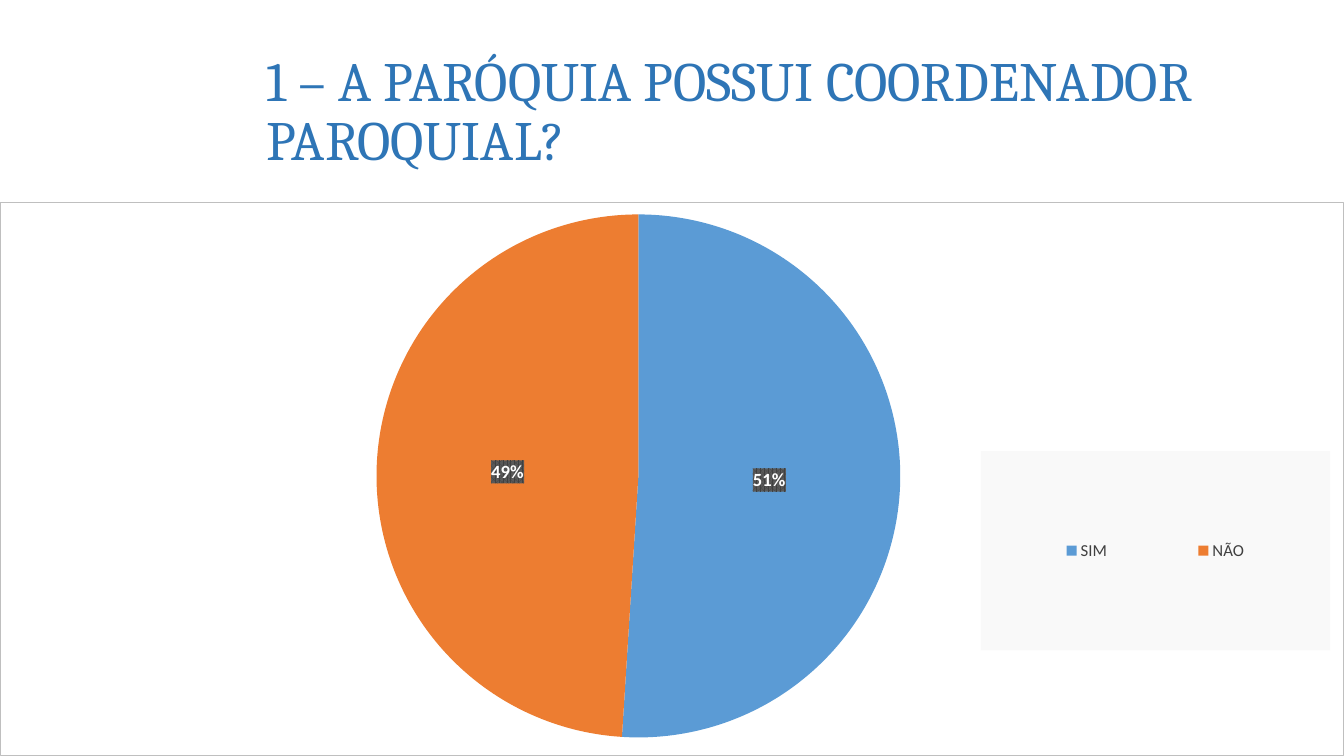
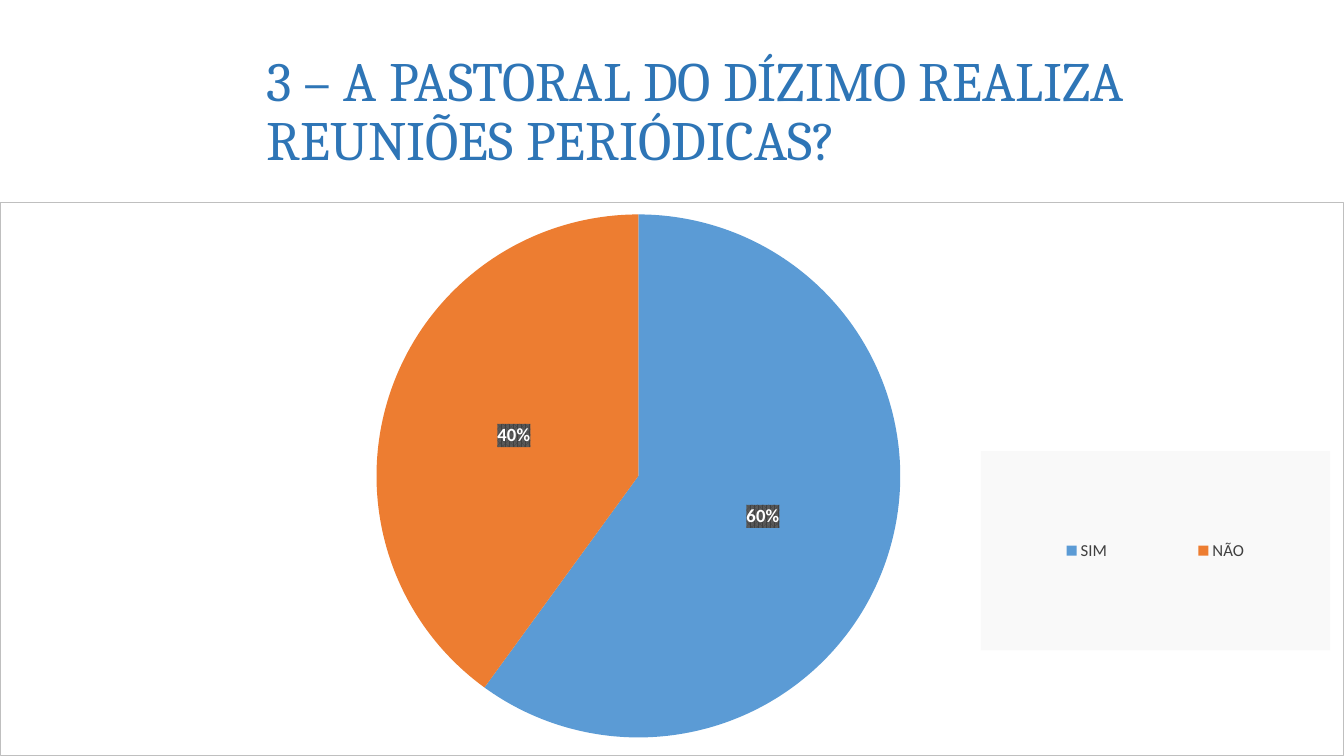
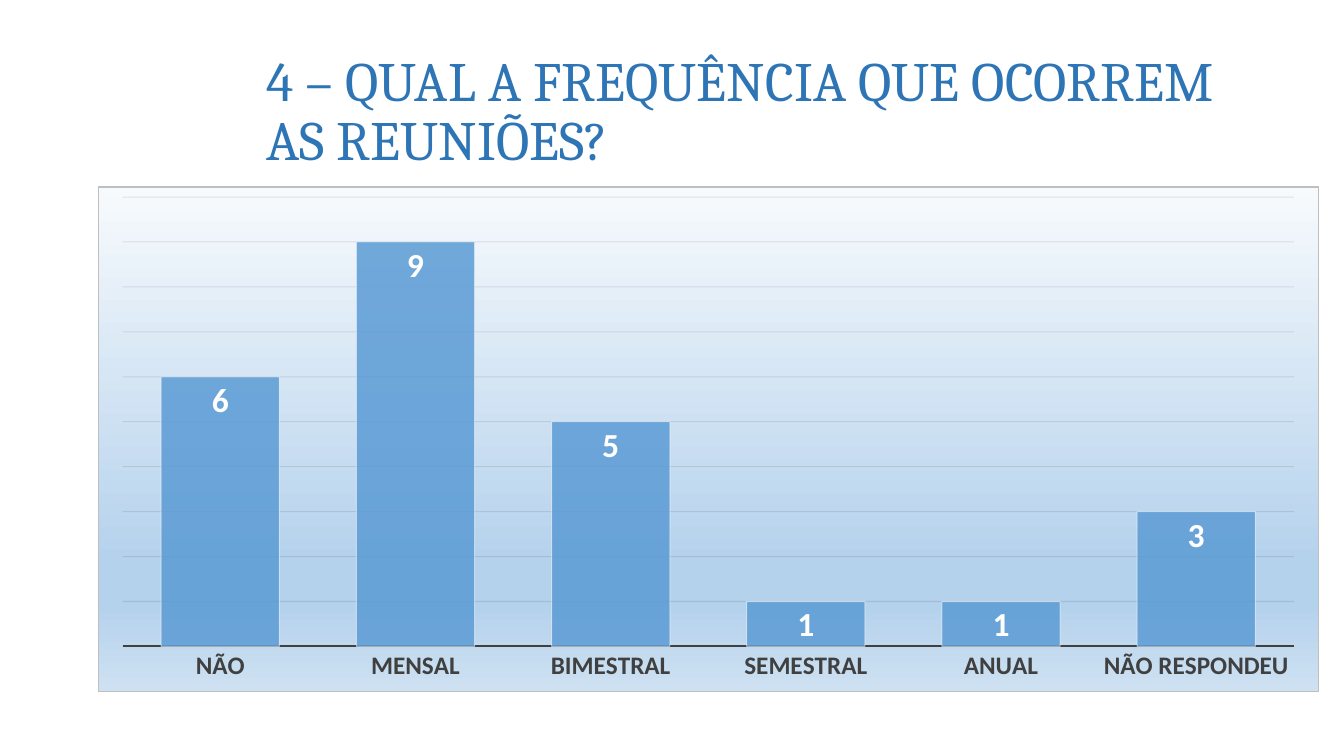
"""Build three survey slides: two yes/no pie charts and one column chart."""
from lxml import etree
from pptx import Presentation
from pptx import util as u
from pptx.chart.data import CategoryChartData
from pptx.dml.color import RGBColor
from pptx.enum import chart as ch, text
from pptx.oxml import parse_xml
from pptx.oxml.ns import nsdecls, qn

COLORS = {"title": "2E75B6", "blue": "5B9BD5", "orange": "ED7D31", "text": "404040",
          "white": "FFFFFF", "black": "000000", "border": "BFBFBF", "grid": "0D0D0D",
          "legend": "F2F2F2", "label": "404040", "label_back": "595959"}
BODY = "Calibri"
TITLE_BOX = (2.54, 0.4, 9.88, 1.45)
TITLE_FONT = {"name": "Cambria", "size": u.Pt(39.6), "bold": False}
PIE_BOX, PIE_PLOT, PIE_LEGEND = (0, 2, 13.33, 5.5), (0.28, 0.02, 0.39, 0.95), (0.73, 0.45, 0.26, 0.36)
COLUMN_BOX, COLUMN_PLOT = (0.97, 1.85, 12.11, 5.02), (0.02, 0.02, 0.96, 0.89)
GRADIENT = [(0, "F7FAFD"), (74, "B5D2EC"), (83, "B5D2EC"), (100, "CEE1F2")]

SLIDES = [
    ("1 – A PARÓQUIA POSSUI COORDENADOR PAROQUIAL?", "pie",
     {"SIM": 51, "NÃO": 49}),
    ("3 – A PASTORAL DO DÍZIMO REALIZA REUNIÕES PERIÓDICAS?", "pie",
     {"SIM": 60, "NÃO": 40}),
    ("4 – QUAL A FREQUÊNCIA QUE OCORREM AS REUNIÕES?", "column",
     {"NÃO": 6, "MENSAL": 9, "BIMESTRAL": 5, "SEMESTRAL": 1, "ANUAL": 1, "NÃO RESPONDEU": 3}),
]


def rgb(name):
    return RGBColor.from_string(COLORS[name])


def assign(obj, values):
    for key, value in values.items():
        setattr(obj, key, value)


def set_font(font, color, **values):
    assign(font, {"name": BODY, **values})
    font.color.rgb = rgb(color)


def set_line(line, color, width):
    line.color.rgb = rgb(color)
    line.width = u.Pt(width)


def srgb(color, alpha=100):
    return f'<a:srgbClr val="{color}"><a:alpha val="{alpha * 1000}"/></a:srgbClr>'


def solid(color, alpha=100):
    return f"<a:solidFill>{srgb(color, alpha)}</a:solidFill>"


def shape_properties(content):
    return parse_xml(f'<c:spPr {nsdecls("c", "a")}>{content}</c:spPr>')


def add_alpha(color_element, percent):
    etree.SubElement(color_element, qn("a:alpha")).set("val", str(percent * 1000))


def manual_layout(parent, index, box, inner=False):
    for old in parent.findall(qn("c:layout")):
        parent.remove(old)
    target = '<c:layoutTarget val="inner"/>' if inner else ""
    modes = '<c:xMode val="edge"/><c:yMode val="edge"/>'
    sizes = "".join(f'<c:{k} val="{v}"/>' for k, v in zip("xywh", box))
    parent.insert(index, parse_xml(
        f'<c:layout {nsdecls("c")}><c:manualLayout>{target}{modes}{sizes}'
        "</c:manualLayout></c:layout>"))


def add_chart(slide, kind, data, box, plot_box, fill):
    cd = CategoryChartData()
    cd.categories = list(data)
    cd.add_series("Series 1", list(data.values()))
    chart = slide.shapes.add_chart(kind, *map(u.Inches, box), cd).chart
    chart.has_title = False
    chart.has_legend = False
    set_font(chart.font, "black", size=u.Pt(10))
    space = chart._chartSpace
    border = f'<a:ln w="9525">{solid(COLORS["border"])}</a:ln>'
    space.find(qn("c:chart")).addnext(shape_properties(fill + border))
    manual_layout(space.chart.plotArea, 0, plot_box, inner=True)
    return chart


def add_labels(series, size, position, **values):
    labels = series.data_labels
    assign(labels, {"position": position, **values})
    set_font(labels.font, "white", size=u.Pt(size), bold=True)
    return labels


def add_pie(slide, data):
    chart = add_chart(slide, ch.XL_CHART_TYPE.PIE, data, PIE_BOX, PIE_PLOT,
                      solid(COLORS["white"]))
    plot = chart.plots[0]
    plot.vary_by_categories = True
    series = plot.series[0]
    for i, color in enumerate(("blue", "orange")):
        fill = series.points[i].format.fill
        fill.solid()
        fill.fore_color.rgb = rgb(color)
    labels = add_labels(series, 13.3, ch.XL_LABEL_POSITION.CENTER, show_value=False,
                        show_percentage=True, number_format="0%",
                        number_format_is_linked=False)
    pattern = (f'<a:pattFill prst="pct75"><a:fgClr>{srgb(COLORS["label"])}</a:fgClr>'
               f'<a:bgClr>{srgb(COLORS["label_back"])}</a:bgClr></a:pattFill>')
    labels._element.find(qn("c:txPr")).addprevious(shape_properties(pattern))
    chart.has_legend = True
    legend = chart.legend
    assign(legend, {"position": ch.XL_LEGEND_POSITION.RIGHT, "include_in_layout": False})
    set_font(legend.font, "text", size=u.Pt(12))
    manual_layout(legend._element, 1, PIE_LEGEND)
    legend._element.find(qn("c:txPr")).addprevious(
        shape_properties(solid(COLORS["legend"], 39)))


def add_columns(slide, data):
    stops = "".join(f'<a:gs pos="{pos * 1000}">{srgb(color)}</a:gs>' for pos, color in GRADIENT)
    gradient = f'<a:gradFill><a:gsLst>{stops}</a:gsLst><a:lin ang="5400000" scaled="0"/></a:gradFill>'
    chart = add_chart(slide, ch.XL_CHART_TYPE.COLUMN_CLUSTERED, data, COLUMN_BOX,
                      COLUMN_PLOT, gradient)
    plot = chart.plots[0]
    assign(plot, {"vary_by_categories": False, "gap_width": 65})
    series = plot.series[0]
    series.format.fill.solid()
    series.format.fill.fore_color.rgb = rgb("blue")
    set_line(series.format.line, "white", 0.75)
    for color, alpha in zip(series._element.xpath("./c:spPr//a:srgbClr"), (85, 50)):
        add_alpha(color, alpha)
    add_labels(series, 24, ch.XL_LABEL_POSITION.INSIDE_END, show_value=True)
    cat, val = chart.category_axis, chart.value_axis
    cat.major_tick_mark = ch.XL_TICK_MARK.NONE
    set_font(cat.tick_labels.font, "text", size=u.Pt(18), bold=True)
    set_line(cat.format.line, "text", 1.5)
    assign(val, {"visible": False, "minimum_scale": 0, "maximum_scale": 10,
                 "major_unit": 1, "has_major_gridlines": True})
    set_line(val.major_gridlines.format.line, "grid", 0.75)
    add_alpha(val._element.xpath("./c:majorGridlines//a:srgbClr")[0], 10)


def add_title(slide, title):
    sp = slide.shapes.title
    assign(sp, dict(zip(("left", "top", "width", "height"), map(u.Inches, TITLE_BOX))))
    tf = sp.text_frame
    tf.text = title
    assign(tf, {"word_wrap": True, "auto_size": text.MSO_AUTO_SIZE.NONE,
                "vertical_anchor": text.MSO_ANCHOR.MIDDLE})
    p = tf.paragraphs[0]
    assign(p, {"alignment": text.PP_ALIGN.LEFT, "line_spacing": 0.88})
    set_font(p.runs[0].font, "title", **TITLE_FONT)


def main():
    prs = Presentation()
    prs.slide_width, prs.slide_height = u.Inches(13.33), u.Inches(7.5)
    builders = {"pie": add_pie, "column": add_columns}
    for title, kind, data in SLIDES:
        slide = prs.slides.add_slide(prs.slide_layouts[5])
        add_title(slide, title)
        builders[kind](slide, data)
    prs.save("out.pptx")


if __name__ == "__main__":
    main()
